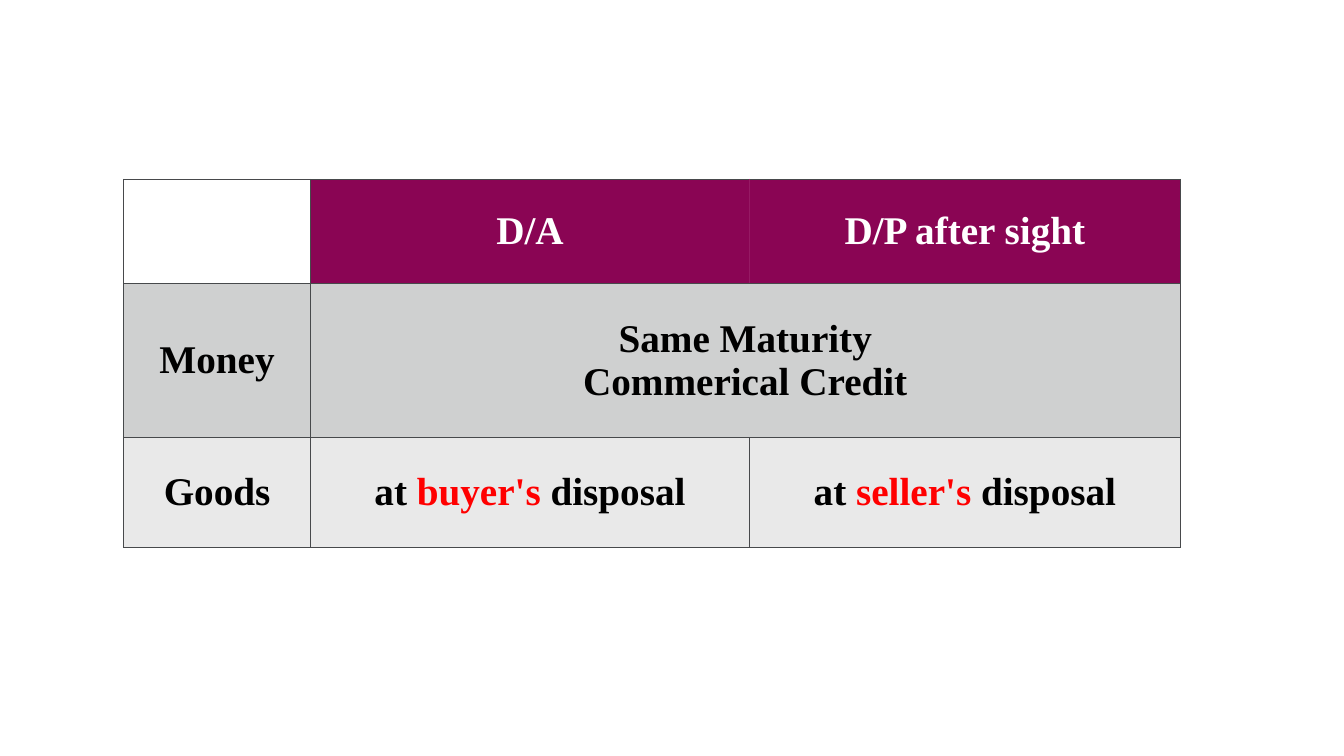
from dataclasses import dataclass

from lxml import etree
from pptx import Presentation
from pptx.dml.color import RGBColor
from pptx.enum.text import MSO_ANCHOR, PP_ALIGN
from pptx.oxml.ns import qn
from pptx.util import Cm, Pt

CENTER = PP_ALIGN.CENTER
MIDDLE = MSO_ANCHOR.MIDDLE


@dataclass(frozen=True)
class Theme:
    font: str = "Times New Roman"
    size: int = 28
    border_width: int = 1
    border: str = "47494B"
    header: str = "8A0554"
    header_divider: str = "961A64"
    money_row: str = "CFD0D0"
    goods_row: str = "E9E9E9"
    light: str = "FFFFFF"
    dark: str = "000000"
    accent: str = "FF0000"


THEME = Theme()
COLUMN_WIDTHS = (4.7, 11.07, 10.85)
ROW_HEIGHTS = (2.62, 3.89, 2.77)


def add_run(paragraph, text, color):
    run = paragraph.add_run()
    run.text = text
    font_format = {"name": THEME.font, "size": Pt(THEME.size), "bold": True}
    for attribute, value in font_format.items():
        setattr(run.font, attribute, value)
    run.font.color.rgb = RGBColor.from_string(color)


def write_cell(cell, paragraphs):
    """Each paragraph is a list of (text, color) runs."""
    cell.vertical_anchor = MIDDLE
    for index, runs in enumerate(paragraphs):
        frame = cell.text_frame
        paragraph = frame.add_paragraph() if index else frame.paragraphs[0]
        paragraph.alignment = CENTER
        for text, color in runs:
            add_run(paragraph, text, color)


def fill_cell(cell, color):
    if color is None:
        cell.fill.background()
    else:
        cell.fill.solid()
        cell.fill.fore_color.rgb = RGBColor.from_string(color)


def set_borders(cell, side_colors):
    """Borders come before the fill, in the order left, right, top, bottom."""
    properties = cell._tc.get_or_add_tcPr()
    for index, (side, color) in enumerate(side_colors.items()):
        line = etree.Element(qn(f"a:ln{side}"), w=str(Pt(THEME.border_width)))
        solid = etree.SubElement(line, qn("a:solidFill"))
        etree.SubElement(solid, qn("a:srgbClr"), val=color)
        properties.insert(index, line)


def add_grid(slide):
    shape = slide.shapes.add_table(
        len(ROW_HEIGHTS), len(COLUMN_WIDTHS), Cm(3.12), Cm(4.52),
        Cm(sum(COLUMN_WIDTHS)), Cm(sum(ROW_HEIGHTS)))
    table = shape.table
    for column, width in zip(table.columns, COLUMN_WIDTHS):
        column.width = Cm(width)
    for row, height in zip(table.rows, ROW_HEIGHTS):
        row.height = Cm(height)
    return table


def style_grid(table):
    row_fills = (THEME.header, THEME.money_row, THEME.goods_row)
    for row, row_fill in enumerate(row_fills):
        for column in range(len(COLUMN_WIDTHS)):
            cell = table.cell(row, column)
            is_corner = row == column == 0
            fill_cell(cell, None if is_corner else row_fill)
            borders = dict.fromkeys("LRTB", THEME.border)
            if row == 0 and column > 0:
                borders["R" if column == 1 else "L"] = THEME.header_divider
            set_borders(cell, borders)


def disposal(party):
    return [[("at ", THEME.dark), (f"{party} ", THEME.accent), ("disposal", THEME.dark)]]


def main():
    presentation = Presentation()
    presentation.slide_width = Cm(33.87)
    presentation.slide_height = Cm(19.05)
    slide = presentation.slides.add_slide(presentation.slide_layouts[6])

    # Comparison table
    table = add_grid(slide)
    style_grid(table)
    table.cell(1, 1).merge(table.cell(1, 2))

    # Wording by row and column
    contents = {
        (0, 1): [[("D/A", THEME.light)]],
        (0, 2): [[("D/P after sight", THEME.light)]],
        (1, 0): [[("Money", THEME.dark)]],
        (1, 1): [[("Same Maturity", THEME.dark)], [("Commerical Credit", THEME.dark)]],
        (2, 0): [[("Goods", THEME.dark)]],
        (2, 1): disposal("buyer's"),
        (2, 2): disposal("seller's"),
    }
    for (row, column), paragraphs in contents.items():
        write_cell(table.cell(row, column), paragraphs)

    presentation.save("out.pptx")


if __name__ == "__main__":
    main()
